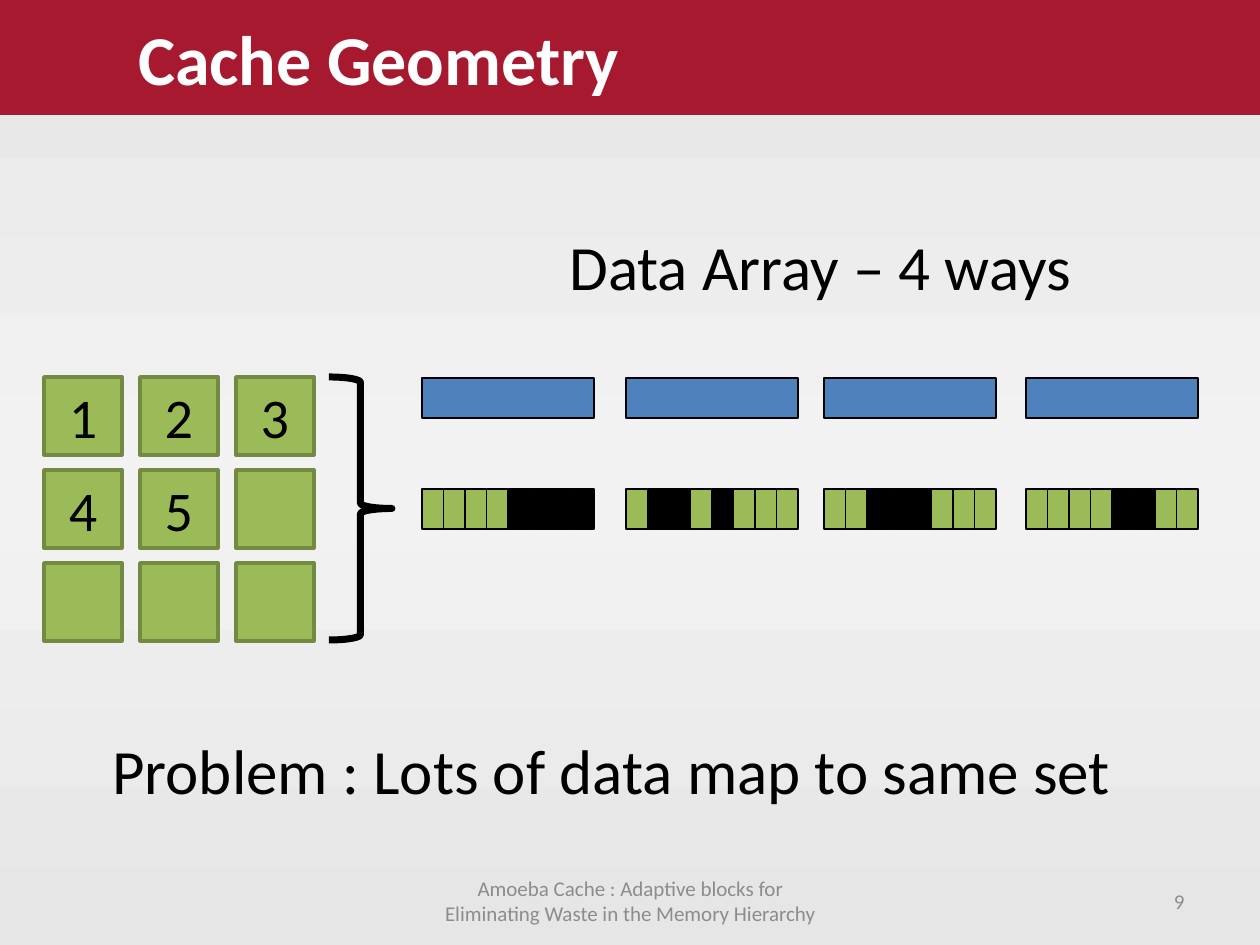
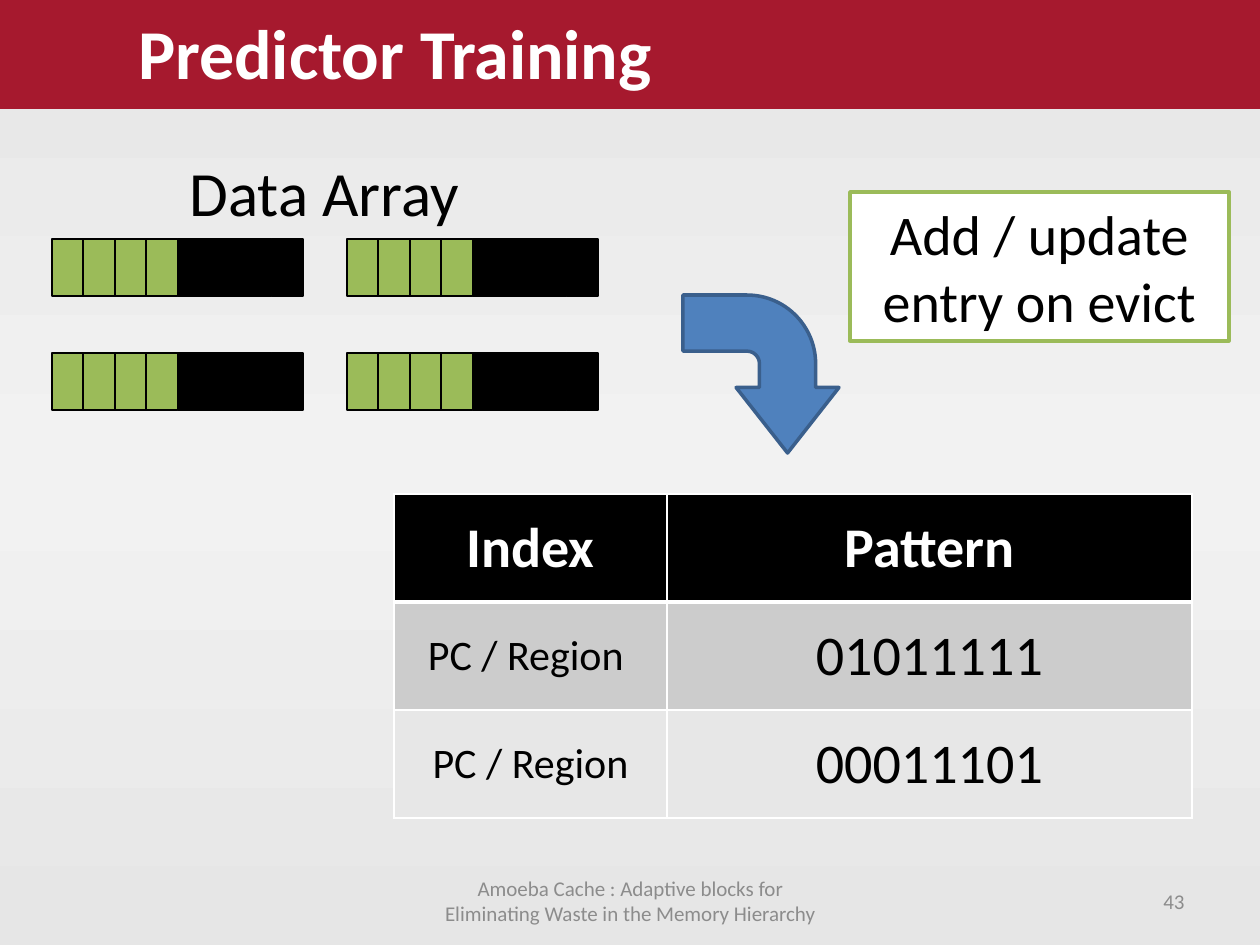
import copy
import dataclasses

import pptx
import pptx.dml.color
import pptx.enum.shapes
import pptx.enum.text
import pptx.oxml
import pptx.oxml.ns
import pptx.util

SHAPE = pptx.enum.shapes.MSO_SHAPE
ALIGN = pptx.enum.text.PP_ALIGN
ANCHOR = pptx.enum.text.MSO_ANCHOR
EMU_PER_PX = 914400 / 126
qn = pptx.oxml.ns.qn


@dataclasses.dataclass(frozen=True)
class Theme:
    font: str = "Calibri"
    band: str = "A6192E"
    white: str = "FFFFFF"
    black: str = "000000"
    muted: str = "8C8C8C"
    blue: str = "4F81BD"
    blue_edge: str = "3A5F8C"
    green: str = "9BBB59"
    green_edge: str = "738A42"
    row_fills: tuple = ("000000", "CCCCCC", "E7E7E7")
    backdrop: tuple = ("E6E6E6", "F2F2F2", "E6E6E6")
    title_size: int = 40
    heading_size: int = 36
    body_size: int = 32
    index_size: int = 24
    footer_size: int = 12


THEME = Theme()

FOOTER = "Amoeba Cache : Adaptive blocks for Eliminating Waste in the Memory Hierarchy"
FOOTER_AREA = (431, 876, 399, 50)
NUMBER_AREA = (903, 876, 294, 50)
TITLE_INDENT = 138
BAND_HEIGHT = 115

GEOMETRY = {"title": "Cache Geometry", "number": "9", "band_top": 0}
GEOMETRY_HEADINGS = [
    ("Data Array – 4 ways", (557, 221, 532, 89)),
    ("Problem : Lots of data map to same set", (100, 725, 1033, 89)),
]
BLOCK_ROWS = [["1", "2", "3"], ["4", "5", ""], ["", "", ""]]
BLOCK_ORIGIN = (44, 377)
BLOCK_STEP = (96, 93)
BLOCK_SIZE = 78
BRACE_AREA = (329, 377, 63, 263)
WAYS = [(422, "11110000"), (626, "10010111"), (824, "11000111"), (1026, "11110011")]
WAY_SIZE = (172, 40)
WHOLE_TOP, WORDS_TOP = 378, 489

TRAINING = {"title": "Predictor Training", "number": "43", "band_top": -6}
ARRAY_HEADING = ("Data Array", (177, 147, 297, 89))
ARRAY_LEFTS = (52, 347)
ARRAY_TOPS = (239, 353)
ARRAY_SIZE = (251, 57)
ARRAY_PATTERN = "11110000"
ARROW_AREA = (682, 296, 158, 156)
ARROW_ADJUSTMENTS = (0.36, 0.33, 0.42, 0.44)
NOTE = ("Add / update entry on evict", (850, 192, 379, 149))
TABLE_ORIGIN = (394, 494)
TABLE_COLUMNS = (273, 525)
TABLE_ROW_HEIGHT = 108
TABLE_ROWS = [
    ("Index", "Pattern"),
    ("PC / Region ", "01011111"),
    ("PC / Region", "00011101"),
]


def px(length):
    return pptx.util.Emu(round(length * EMU_PER_PX))


def rgb(value):
    return pptx.dml.color.RGBColor.from_string(value)


def paint(shape, fill):
    shape.fill.solid()
    shape.fill.fore_color.rgb = rgb(fill)


def write(frame, text, size, color=THEME.black, align=ALIGN.LEFT, bold=False):
    para = frame.paragraphs[0]
    para.text = text
    para.alignment = align
    para.font.name = THEME.font
    para.font.size = pptx.util.Pt(size)
    para.font.bold = bold
    para.font.color.rgb = rgb(color)


def add_label(page, text, area, size, wrap=False, **style):
    box = page.shapes.add_textbox(*map(px, area))
    box.text_frame.word_wrap = wrap
    if wrap:
        box.text_frame.vertical_anchor = ANCHOR.MIDDLE
    write(box.text_frame, text, size, **style)


def add_figure(page, kind, area, fill=None, edge=THEME.black, weight=1):
    figure = page.shapes.add_shape(kind, *map(px, area))
    figure.shadow.inherit = False
    if fill:
        paint(figure, fill)
    else:
        figure.fill.background()
    figure.line.color.rgb = rgb(edge)
    figure.line.width = pptx.util.Pt(weight)
    return figure


def add_words(page, left, top, size, pattern):
    width, height = size
    step = width / len(pattern)
    for index, bit in enumerate(pattern):
        fill = THEME.green if bit == "1" else THEME.black
        add_figure(page, SHAPE.RECTANGLE, (left + index * step, top, step, height), fill)


def set_backdrop(master):
    fill = master.background.fill
    fill.gradient()
    fill.gradient_angle = 90
    stops = next(master.element.iter(qn("a:gsLst")))
    stops.append(copy.deepcopy(stops[0]))
    for index, (stop, color) in enumerate(zip(fill.gradient_stops, THEME.backdrop)):
        stop.color.rgb = rgb(color)
        stop.position = index / 2


def add_page(deck, content):
    page = deck.slides.add_slide(deck.slide_layouts[5])
    title = page.shapes.title
    title.left, title.top = px(0), px(content["band_top"])
    title.width, title.height = deck.slide_width, px(BAND_HEIGHT)
    paint(title, THEME.band)
    frame = title.text_frame
    frame.auto_size = pptx.enum.text.MSO_AUTO_SIZE.NONE
    frame.margin_left = px(TITLE_INDENT)
    frame.vertical_anchor = ANCHOR.MIDDLE
    write(frame, content["title"], THEME.title_size, THEME.white, bold=True)
    for text, area, align in (
        (FOOTER, FOOTER_AREA, ALIGN.CENTER),
        (content["number"], NUMBER_AREA, ALIGN.RIGHT),
    ):
        add_label(page, text, area, THEME.footer_size, wrap=True, color=THEME.muted, align=align)
    return page


def add_blocks(page):
    for row, labels in enumerate(BLOCK_ROWS):
        for column, label in enumerate(labels):
            left = BLOCK_ORIGIN[0] + column * BLOCK_STEP[0]
            top = BLOCK_ORIGIN[1] + row * BLOCK_STEP[1]
            area = (left, top, BLOCK_SIZE, BLOCK_SIZE)
            block = add_figure(page, SHAPE.RECTANGLE, area, THEME.green, THEME.green_edge, 2)
            if label:
                write(block.text_frame, label, THEME.body_size, align=ALIGN.CENTER)


def border_cell(cell, is_header):
    properties = cell._tc.get_or_add_tcPr()
    for index, side in enumerate("LRTB"):
        weight = 3 if is_header and side == "B" else 1
        border = pptx.oxml.parse_xml(
            f'<a:ln{side} {pptx.oxml.ns.nsdecls("a")} w="{pptx.util.Pt(weight)}">'
            f'<a:solidFill><a:srgbClr val="{THEME.white}"/></a:solidFill></a:ln{side}>'
        )
        properties.insert(index, border)


def add_predictor_table(page):
    area = (*TABLE_ORIGIN, sum(TABLE_COLUMNS), TABLE_ROW_HEIGHT * len(TABLE_ROWS))
    table = page.shapes.add_table(len(TABLE_ROWS), len(TABLE_COLUMNS), *map(px, area)).table
    for column, width in zip(table.columns, TABLE_COLUMNS):
        column.width = px(width)
    for row, texts in enumerate(TABLE_ROWS):
        table.rows[row].height = px(TABLE_ROW_HEIGHT)
        is_header = row == 0
        color = THEME.white if is_header else THEME.black
        for column, text in enumerate(texts):
            cell = table.cell(row, column)
            paint(cell, THEME.row_fills[row])
            cell.vertical_anchor = ANCHOR.MIDDLE
            is_index = column == 0 and not is_header
            size = THEME.index_size if is_index else THEME.body_size
            write(cell.text_frame, text, size, color, ALIGN.CENTER, is_header)
            border_cell(cell, is_header)


def build_geometry(deck):
    page = add_page(deck, GEOMETRY)
    for text, area in GEOMETRY_HEADINGS:
        add_label(page, text, area, THEME.heading_size)
    add_blocks(page)
    add_figure(page, SHAPE.RIGHT_BRACE, BRACE_AREA, weight=4)
    for left, pattern in WAYS:
        add_figure(page, SHAPE.RECTANGLE, (left, WHOLE_TOP, *WAY_SIZE), THEME.blue)
        add_words(page, left, WORDS_TOP, WAY_SIZE, pattern)


def build_training(deck):
    page = add_page(deck, TRAINING)
    heading, area = ARRAY_HEADING
    add_label(page, heading, area, THEME.heading_size)
    for top in ARRAY_TOPS:
        for left in ARRAY_LEFTS:
            add_words(page, left, top, ARRAY_SIZE, ARRAY_PATTERN)
    add_predictor_table(page)
    arrow = add_figure(page, SHAPE.BENT_ARROW, ARROW_AREA, THEME.blue, THEME.blue_edge, 2)
    arrow.rotation = 90
    for index, value in enumerate(ARROW_ADJUSTMENTS):
        arrow.adjustments[index] = value
    text, area = NOTE
    note = add_figure(page, SHAPE.RECTANGLE, area, THEME.white, THEME.green, 2)
    note.text_frame.word_wrap = True
    write(note.text_frame, text, THEME.body_size, align=ALIGN.CENTER)


def main():
    deck = pptx.Presentation()
    deck.slide_width, deck.slide_height = px(1260), px(945)
    set_backdrop(deck.slide_master)
    build_geometry(deck)
    build_training(deck)
    deck.save("out.pptx")


if __name__ == "__main__":
    main()
